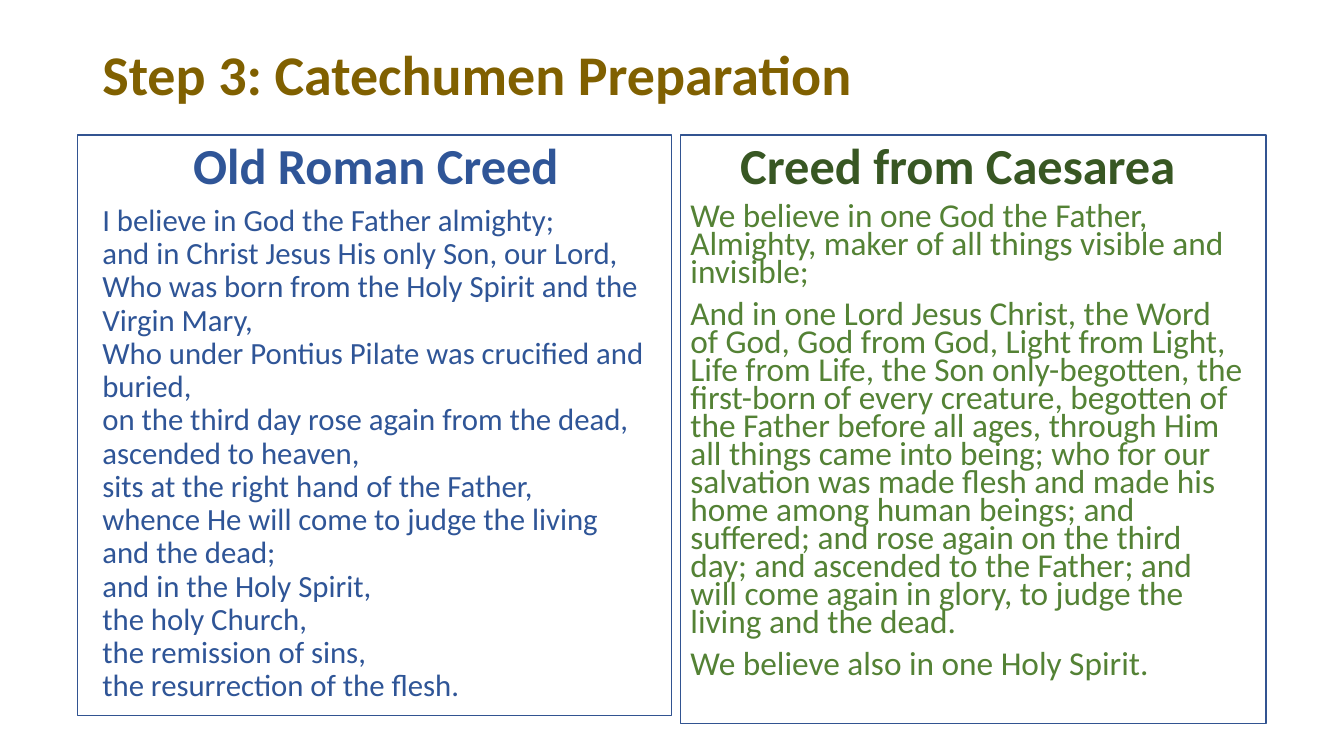
from dataclasses import dataclass

from pptx import Presentation
from pptx.dml.color import RGBColor
from pptx.enum.shapes import MSO_SHAPE
from pptx.enum.text import MSO_ANCHOR as Anchor, PP_ALIGN as Align
from pptx.slide import Slide
from pptx.util import Cm, Pt

GOLD = RGBColor(0x80, 0x60, 0x00)
BLUE = RGBColor(0x2F, 0x55, 0x97)
DARK_GREEN = RGBColor(0x38, 0x57, 0x23)
GREEN = RGBColor(0x54, 0x82, 0x35)
BORDER = RGBColor(0x32, 0x54, 0x91)
FONT = "Calibri"


@dataclass(frozen=True)
class Box:
    left: float
    top: float
    width: float
    height: float

    def lengths(self) -> tuple[Cm, Cm, Cm, Cm]:
        return Cm(self.left), Cm(self.top), Cm(self.width), Cm(self.height)


@dataclass(frozen=True)
class Text:
    box: Box
    lines: tuple[str, ...]
    size: float
    color: RGBColor
    spacing: float
    before: float = 10
    bold: bool = False
    align: Align = Align.LEFT
    anchor: Anchor = Anchor.TOP
    inset_top: float = 0.13


@dataclass(frozen=True)
class Creed:
    frame: Box
    heading: Text
    body: Text


TITLE = Text(Box(2.33, 1.02, 29.21, 3.68), ("Step 3: Catechumen Preparation",),
             40, GOLD, 0.9, bold=True, inset_top=0.18)

ROMAN_LINES = (
    "I believe in God the Father almighty;",
    "and in Christ Jesus His only Son, our Lord,",
    "Who was born from the Holy Spirit and the Virgin Mary,",
    "Who under Pontius Pilate was crucified and buried,",
    "on the third day rose again from the dead,",
    "ascended to heaven,",
    "sits at the right hand of the Father,",
    "whence He will come to judge the living and the dead;",
    "and in the Holy Spirit,",
    "the holy Church,",
    "the remission of sins,",
    "the resurrection of the flesh.",
)

CAESAREA_LINES = (
    "We believe in one God the Father, Almighty, maker of all things visible "
    "and invisible;",
    "And in one Lord Jesus Christ, the Word of God, God from God, Light from "
    "Light, Life from Life, the Son only-begotten, the first-born of every "
    "creature, begotten of the Father before all ages, through Him all things "
    "came into being; who for our salvation was made flesh and made his home "
    "among human beings; and suffered; and rose again on the third day; and "
    "ascended to the Father; and will come again in glory, to judge the living "
    "and the dead.",
    "We believe also in one Holy Spirit.",
)


def heading(box: Box, words: str, color: RGBColor) -> Text:
    return Text(box, (words,), 36, color, 0.8, bold=True,
                align=Align.CENTER, anchor=Anchor.BOTTOM)


CREEDS = (
    Creed(Box(1.96, 3.4, 14.96, 14.63),
          heading(Box(2.31, 3.4, 14.33, 1.63), "Old Roman Creed", BLUE),
          Text(Box(2.33, 5.03, 14.33, 13.72), ROMAN_LINES, 22, BLUE, 0.9, before=0)),
    Creed(Box(17.15, 3.4, 14.76, 14.83),
          heading(Box(16.94, 3.3, 14.4, 1.73), "Creed from Caesarea", DARK_GREEN),
          Text(Box(17.15, 5.03, 14.4, 13.72), CAESAREA_LINES, 23.8, GREEN, 0.7)),
)


def add_text(s: Slide, text: Text) -> None:
    tf = s.shapes.add_textbox(*text.box.lengths()).text_frame
    tf.word_wrap = True
    tf.vertical_anchor = text.anchor
    tf.margin_top = Cm(text.inset_top)
    for i, line in enumerate(text.lines):
        p = tf.add_paragraph() if i else tf.paragraphs[0]
        p.alignment = text.align
        p.line_spacing = text.spacing
        p.space_before = Pt(text.before)
        r = p.add_run()
        r.text = line
        r.font.name = FONT
        r.font.size = Pt(text.size)
        r.font.bold = text.bold
        r.font.color.rgb = text.color


def add_frame(s: Slide, box: Box) -> None:
    sp = s.shapes.add_shape(MSO_SHAPE.RECTANGLE, *box.lengths())
    sp.shadow.inherit = False
    sp.fill.background()
    sp.line.color.rgb = BORDER
    sp.line.width = Pt(1)


def main() -> None:
    prs = Presentation()
    prs.slide_width, prs.slide_height = Cm(33.87), Cm(19.05)
    s = prs.slides.add_slide(prs.slide_layouts[6])
    add_text(s, TITLE)
    for creed in CREEDS:
        add_text(s, creed.heading)
        add_text(s, creed.body)
    for creed in CREEDS:
        add_frame(s, creed.frame)
    prs.save("out.pptx")


if __name__ == "__main__":
    main()
